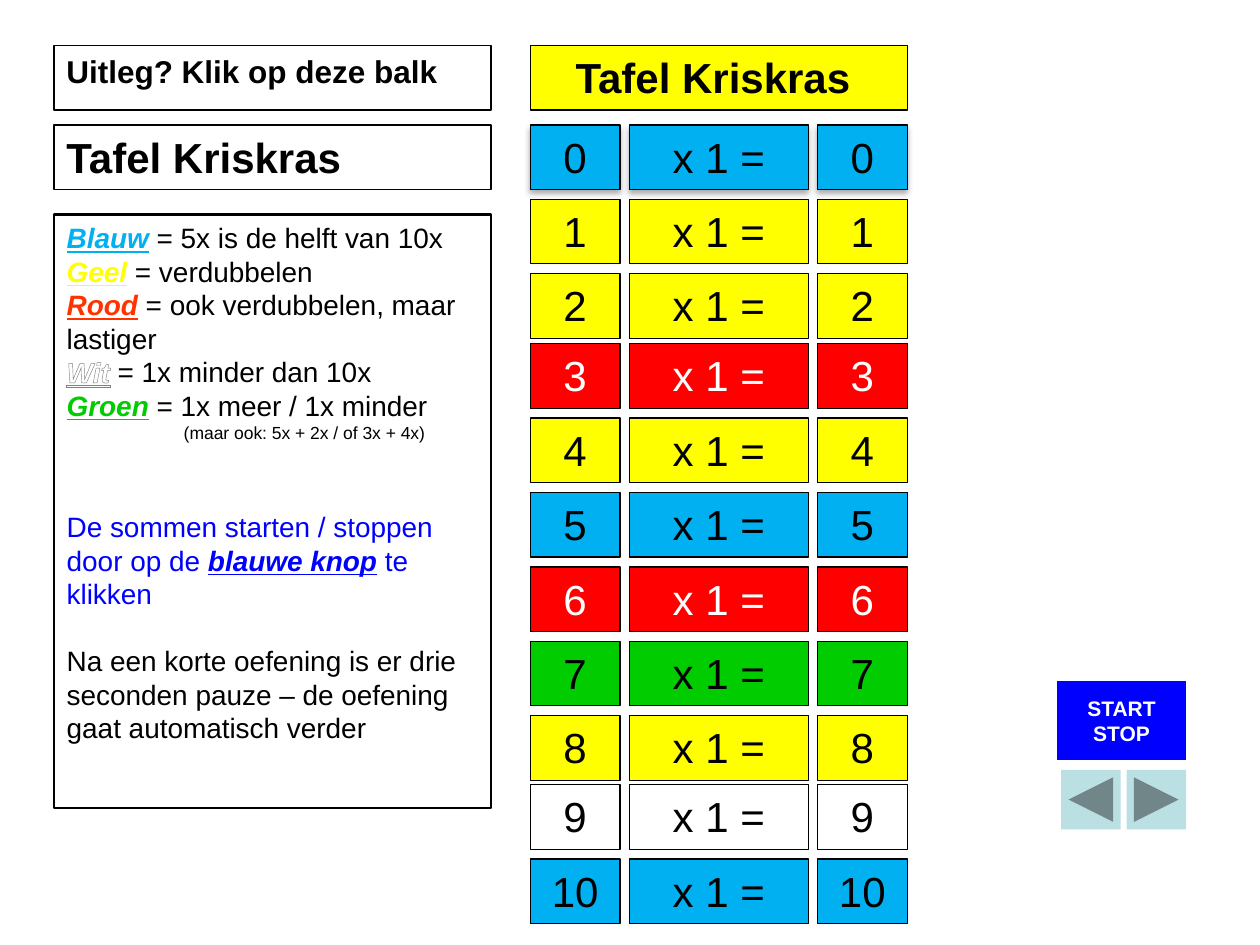
from dataclasses import dataclass
from lxml.etree import SubElement
from pptx import Presentation
from pptx.dml.color import RGBColor
from pptx.enum.shapes import MSO_SHAPE as Shape
from pptx.enum.text import MSO_ANCHOR as Anchor, MSO_AUTO_SIZE as Fit, PP_ALIGN as Align
from pptx.oxml.ns import qn
from pptx.util import Cm, Pt


@dataclass(frozen=True)
class Theme:
    font: str = "Arial"
    black: str = "000000"
    white: str = "FFFFFF"
    blue: str = "00B0F0"
    yellow: str = "FFFF00"
    red: str = "FF0000"
    orange: str = "FF3300"
    green: str = "00CC00"
    button_blue: str = "0000FF"
    pale: str = "BBE0E3"
    grey: str = "808080"
    big: int = 24
    bar: int = 18
    body: int = 16
    button: int = 12
    small: int = 10


T = Theme()

# Content: sums in three blocks, each with its top in cm
TABLE_OF = 1
SUM_BLOCKS = [
    (2.52, [T.blue, T.yellow, T.yellow]),
    (6.93, [T.red, T.yellow, T.blue, T.red, T.green, T.yellow]),
    (15.82, [T.white, T.blue]),
]
LEGEND = [
    ("Blauw", T.blue, " = 5x is de helft van 10x"),
    ("Geel", T.yellow, " = verdubbelen"),
    ("Rood", T.orange, " = ook verdubbelen, maar lastiger"),
    ("Wit", T.white, " = 1x minder dan 10x"),
    ("Groen", T.green, " = 1x meer / 1x minder"),
]
HINT = "(maar ook: 5x + 2x / of 3x + 4x)"
START_STOP = [("De sommen starten / stoppen door op de ", False),
              ("blauwe knop", True), (" te klikken", False)]
PAUSE = ("Na een korte oefening is er drie seconden pauze – "
         "de oefening gaat automatisch verder")

# Layout in cm
LEFT, LEFT_WIDTH = 1.09, 8.81
GRID_LEFT, GRID_WIDTH = 10.69, 7.6
BAR_TOP, ROW_HEIGHT, ROW_STEP = 0.92, 1.3, 1.5
SIDE_WIDTH, SUM_WIDTH = 1.81, 3.61
GAP = (GRID_WIDTH - 2 * SIDE_WIDTH - SUM_WIDTH) / 2


def rgb(value):
    return RGBColor.from_string(value)


def place(part, left, top, width, height):
    part.left, part.top, part.width, part.height = map(Cm, (left, top, width, height))


def paint(part, fill=None, line=None, weight=0.75):
    if fill:
        part.fill.solid()
        part.fill.fore_color.rgb = rgb(fill)
    else:
        part.fill.background()
    if line:
        part.line.color.rgb = rgb(line)
        part.line.width = Pt(weight)
    else:
        part.line.fill.background()


def add_box(kind, left, top, width, height, fill=None, line=None):
    box = slide.shapes.add_shape(kind, *map(Cm, (left, top, width, height)))
    box.shadow.inherit = False
    paint(box, fill, line)
    return box


def open_frame(part, anchor=Anchor.TOP):
    frame = part.text_frame
    frame.auto_size = Fit.NONE
    frame.word_wrap = True
    frame.vertical_anchor = anchor
    return frame


def add_run(paragraph, text, size, color=T.black, bold=False, marked=False):
    run = paragraph.add_run()
    run.text = text
    font = run.font
    font.name, font.size, font.color.rgb = T.font, Pt(size), rgb(color)
    font.bold = bold or marked
    font.italic = font.underline = marked
    return run


def write(part, text, size, color=T.black, bold=False, align=Align.LEFT):
    paragraph = open_frame(part).paragraphs[0]
    paragraph.alignment = align
    add_run(paragraph, text, size, color, bold)


def outline(run, color):
    line = run.font.fill._xPr.makeelement(qn("a:ln"), {"w": "12700"})
    SubElement(SubElement(line, qn("a:solidFill")), qn("a:srgbClr"), val=color)
    run.font.fill._xPr.insert(0, line)


def cast_shadow(box):
    effects = box._element.spPr.find(qn("a:effectLst"))
    shadow = SubElement(effects, qn("a:outerShdw"), blurRad="44450", dist="27940",
                        dir="5400000", algn="ctr", rotWithShape="0")
    color = SubElement(shadow, qn("a:srgbClr"), val=T.black)
    SubElement(color, qn("a:alpha"), val="32000")


deck = Presentation()
deck.slide_width, deck.slide_height = Cm(25.4), Cm(19.05)
slide = deck.slides.add_slide(deck.slide_layouts[1])

# Title bar above the sums
title = slide.shapes.title
place(title, GRID_LEFT, BAR_TOP, GRID_WIDTH, ROW_HEIGHT)
paint(title, T.yellow, T.black)
write(title, "Tafel Kriskras ", T.big, bold=True, align=Align.CENTER)

# Explanation
explanation = slide.placeholders[1]
place(explanation, LEFT, 4.32, LEFT_WIDTH, 11.97)
paint(explanation, T.white, T.black, 1.5)
explanation_frame = open_frame(explanation)


def add_line(before=0, indent=0):
    first = explanation_frame.paragraphs[0]
    paragraph = explanation_frame.add_paragraph() if first.runs else first
    paragraph.space_before = Pt(before)
    props = paragraph._p.get_or_add_pPr()
    props.set("marL", str(Cm(indent)))
    props.set("indent", "0")
    SubElement(props, qn("a:buNone"))
    return paragraph


for name, color, meaning in LEGEND:
    entry = add_line()
    name_run = add_run(entry, name, T.body, color, marked=True)
    if color == T.white:
        outline(name_run, T.grey)
    add_run(entry, meaning, T.body)
add_run(add_line(indent=2.36), HINT, T.small)
start_stop = add_line(before=38)
for text, marked in START_STOP:
    add_run(start_stop, text, T.body, T.button_blue, marked=marked)
add_run(add_line(before=19), PAUSE, T.body)

# Bars above the explanation
for top, text, size in [(BAR_TOP, "Uitleg? Klik op deze balk", T.bar),
                        (2.52, "Tafel Kriskras", T.big)]:
    bar = add_box(Shape.RECTANGLE, LEFT, top, LEFT_WIDTH, ROW_HEIGHT, line=T.black)
    write(bar, text, size, bold=True)

# Sums: factor, times, answer
rows = [(top + i * ROW_STEP, color)
        for top, colors in SUM_BLOCKS for i, color in enumerate(colors)]
for factor, (top, color) in enumerate(rows):
    left = GRID_LEFT
    for text, width in [(str(factor), SIDE_WIDTH), (f"x {TABLE_OF} =", SUM_WIDTH),
                        (str(factor * TABLE_OF), SIDE_WIDTH)]:
        cell = add_box(Shape.RECTANGLE, left, top, width, ROW_HEIGHT, color, T.black)
        write(cell, text, T.big, T.white if color == T.red else T.black,
              align=Align.CENTER)
        if factor == 0:
            cast_shadow(cell)
        left += width + GAP

# Buttons
for kind, left in [(Shape.ACTION_BUTTON_FORWARD_OR_NEXT, 22.71),
                   (Shape.ACTION_BUTTON_BACK_OR_PREVIOUS, 21.39)]:
    add_box(kind, left, 15.52, 1.2, 1.2, T.pale)
start_button = add_box(Shape.ACTION_BUTTON_CUSTOM, 21.31, 13.72, 2.6, 1.6, T.button_blue)
button_frame = open_frame(start_button, Anchor.MIDDLE)
button_frame.word_wrap = False
for paragraph, text in zip((button_frame.paragraphs[0], button_frame.add_paragraph()),
                           ("START", "STOP")):
    paragraph.alignment = Align.CENTER
    add_run(paragraph, text, T.button, T.white, bold=True)

deck.save("out.pptx")
